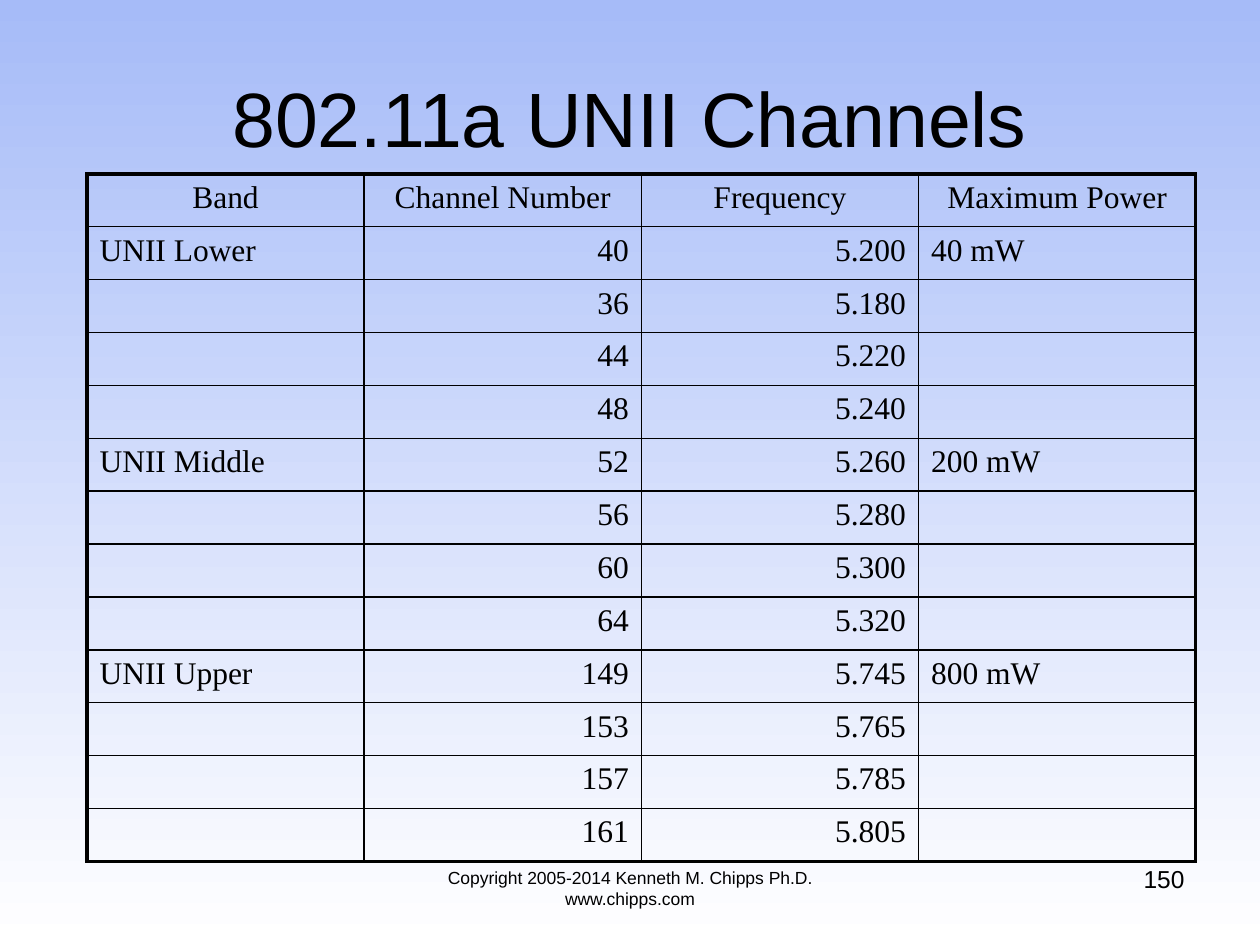
from lxml import etree
from pptx import Presentation
from pptx.dml.color import RGBColor
from pptx.enum.text import MSO_ANCHOR, PP_ALIGN
from pptx.oxml.ns import qn
from pptx.util import Inches, Pt

LEFT, CENTER, RIGHT = PP_ALIGN.LEFT, PP_ALIGN.CENTER, PP_ALIGN.RIGHT
TOP, MIDDLE = MSO_ANCHOR.TOP, MSO_ANCHOR.MIDDLE
BLACK = RGBColor(0x00, 0x00, 0x00)
SKY = RGBColor(0xA6, 0xBB, 0xF8)
WHITE = RGBColor(0xFF, 0xFF, 0xFF)

TITLE = "802.11a UNII Channels"
FOOTER = "Copyright 2005-2014 Kenneth M. Chipps Ph.D. www.chipps.com"
PAGE_NUMBER = "150"
HEADERS = ("Band", "Channel Number", "Frequency", "Maximum Power")
BANDS = [
    ("UNII Lower", "40 mW",
     [("40", "5.200"), ("36", "5.180"), ("44", "5.220"), ("48", "5.240")]),
    ("UNII Middle", "200 mW",
     [("52", "5.260"), ("56", "5.280"), ("60", "5.300"), ("64", "5.320")]),
    ("UNII Upper", "800 mW",
     [("149", "5.745"), ("153", "5.765"), ("157", "5.785"), ("161", "5.805")]),
]
COLUMN_ALIGNS = (LEFT, RIGHT, RIGHT, LEFT)
COLUMN_WIDTH, ROW_HEIGHT = 2.2, 0.42
OUTER_LINE, INNER_LINE = 2.25, 1


def write_text(frame, text, size=18, font="Arial", align=LEFT):
    para = frame.paragraphs[0]
    para.alignment = align
    span = para.add_run()
    span.text = text
    span.font.size = Pt(size)
    span.font.name = font
    span.font.color.rgb = BLACK


def add_text(page, text, left, top, width, height, anchor=TOP, **text_format):
    box = page.shapes.add_textbox(
        Inches(left), Inches(top), Inches(width), Inches(height))
    box.text_frame.word_wrap = True
    box.text_frame.vertical_anchor = anchor
    write_text(box.text_frame, text, **text_format)


def set_borders(cell, edges):
    properties = cell._tc.get_or_add_tcPr()
    for side, is_outer in edges.items():
        width = Pt(OUTER_LINE if is_outer else INNER_LINE)
        line = etree.SubElement(properties, qn(f"a:ln{side}"), w=str(width))
        fill = etree.SubElement(line, qn("a:solidFill"))
        etree.SubElement(fill, qn("a:srgbClr"), val=str(BLACK))


def add_channel_table(page, left, top):
    rows = [HEADERS]
    for band, power, channels in BANDS:
        for index, (number, frequency) in enumerate(channels):
            is_first = index == 0
            rows.append((band if is_first else "", number, frequency,
                         power if is_first else ""))
    row_count, column_count = len(rows), len(HEADERS)
    table = page.shapes.add_table(
        row_count, column_count, Inches(left), Inches(top),
        Inches(COLUMN_WIDTH * column_count),
        Inches(ROW_HEIGHT * row_count)).table
    table.first_row = False
    table.horz_banding = False
    for column in table.columns:
        column.width = Inches(COLUMN_WIDTH)
    for row_index, values in enumerate(rows):
        table.rows[row_index].height = Inches(ROW_HEIGHT)
        for column_index, text in enumerate(values):
            cell = table.cell(row_index, column_index)
            set_borders(cell, {
                "L": column_index == 0,
                "R": column_index == column_count - 1,
                "T": row_index == 0,
                "B": row_index == row_count - 1,
            })
            cell.fill.background()
            if text:
                align = CENTER if row_index == 0 else COLUMN_ALIGNS[column_index]
                write_text(cell.text_frame, text, font="Times New Roman", align=align)


def main():
    deck = Presentation()
    deck.slide_width, deck.slide_height = Inches(10), Inches(7.5)
    page = deck.slides.add_slide(deck.slide_layouts[6])

    backdrop = page.background.fill
    backdrop.gradient()
    backdrop.gradient_angle = 270
    for stop, color in zip(backdrop.gradient_stops, (SKY, WHITE)):
        stop.color.rgb = color

    add_text(page, TITLE, 0.5, 0.3, 9, 1.25, anchor=MIDDLE, size=44, align=CENTER)
    add_channel_table(page, 0.69, 1.38)
    add_text(page, PAGE_NUMBER, 7.17, 6.81, 2.33, 0.52, size=14, align=RIGHT)
    add_text(page, FOOTER, 3, 6.83, 4, 0.52, size=10, align=CENTER)
    deck.save("out.pptx")


if __name__ == "__main__":
    main()
